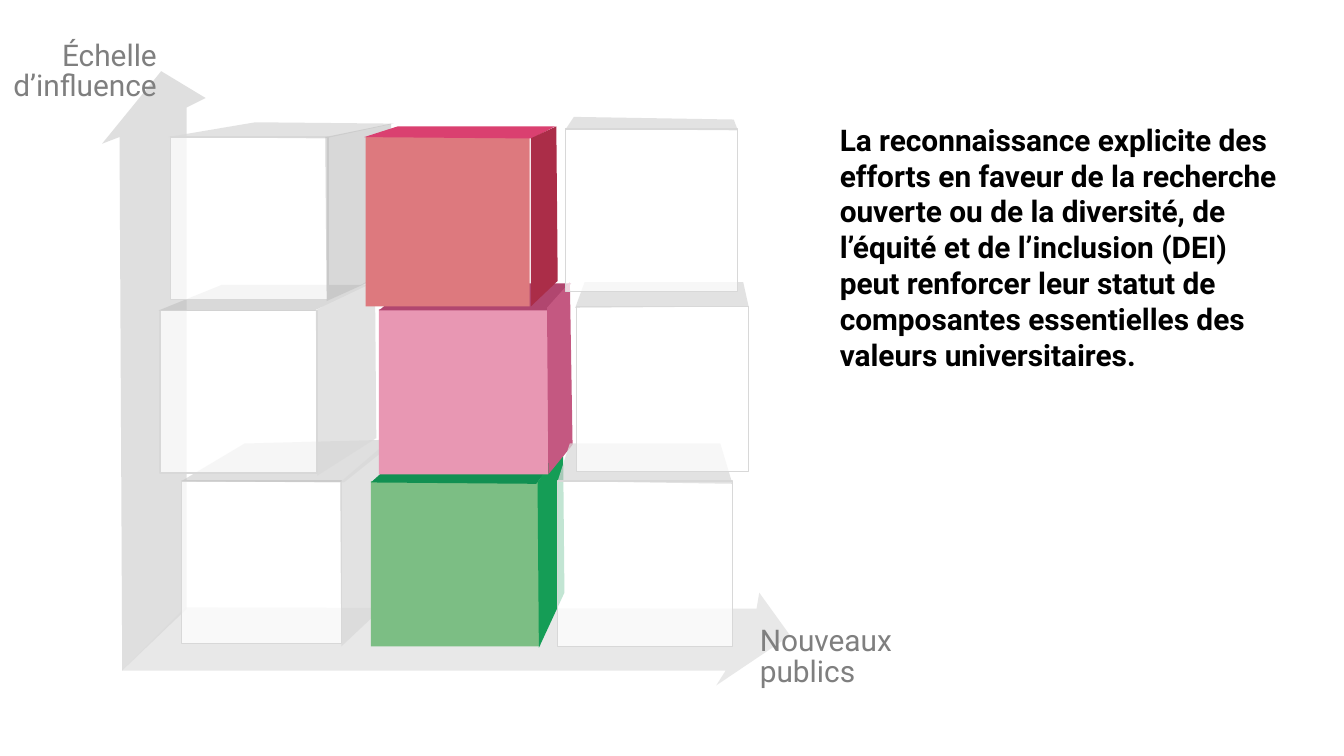
"""Build a slide with a three by three wall of cubes between two arrows."""
from lxml import etree
from pptx import Presentation
from pptx import util as u
from pptx.dml.color import RGBColor
from pptx.enum import shapes, text
from pptx.oxml.ns import qn

WIDTH = u.Inches(10)
HEIGHT = u.Emu(WIDTH * 9 // 16)
COLUMNS = 100
CELL = WIDTH / COLUMNS
FONT = "Roboto"
GREY, DARK_GREY, EDGE = "D9D9D9", "BFBFBF", "D8D8D8"
GLASS = ("FFFFFF", 74)

ARROWS = [
    ((GREY, 84), [(7.6, 10.7), (12, 5.3), (15.3, 7.3), (13.9, 8),
                  (13.9, 45.3), (9.1, 49.9), (8.9, 10.2)]),
    ((GREY, 60), [(53.3, 51), (58.8, 47.3), (56.5, 44.1), (56.3, 45.3),
                  (13.8, 45.2), (9.1, 49.9), (54, 49.9)]),
]

CUBES = [
    ((13.5, 35.8, 11.9, 12.1), GLASS, [
        ((DARK_GREY, 49), [(13.5, 35.8), (25.6, 35.9), (29.6, 32.7), (18.2, 33)]),
        ((GREY, 75), [(25.4, 48.1), (25.3, 35.9), (28.8, 32.9), (28.8, 44.9)])]),
    ((11.9, 23.1, 11.7, 12.1), GLASS, [
        ((DARK_GREY, 59), [(11.8, 23.1), (23.4, 23.1), (27.4, 21.2), (16.5, 21.2)]),
        ((GREY, 75), [(23.6, 35.4), (28, 32.6), (27.9, 20.6), (23.5, 23.1)])]),
    ((12.7, 10.2, 11.7, 12.1), GLASS, [
        ((GREY, 75), [(12.5, 10.2), (19, 9.1), (29.3, 9.2), (24.2, 10.3)]),
        ((DARK_GREY, 60), [(24.2, 10.2), (24.3, 22.4), (29.4, 20.1), (29.1, 9.2)])]),
    ((27.6, 35.8, 12.6, 12.3), ("7CBE84", 100), [
        (("119052", 100), [(27.6, 35.9), (39.9, 36), (42.1, 33.2), (30.6, 33.2)]),
        (("159D56", 100), [(40.1, 48.2), (40, 35.9), (41.9, 33), (42, 44.1)])]),
    ((28.2, 23, 12.6, 12.3), ("E897B3", 100), [
        (("B1466F", 100), [(28.2, 23.1), (40.7, 23.1), (42.5, 21.1), (30.7, 21.1)]),
        (("C45881", 100), [(40.7, 22.9), (42.4, 21), (42.6, 33.1), (40.8, 35.3)])]),
    ((27.2, 10.2, 12.2, 12.6), ("DD797E", 100), [
        (("DA4070", 100), [(27.1, 10.2), (39.6, 10.3), (41.3, 9.4), (29.6, 9.4)]),
        (("AB2D48", 100), [(39.5, 22.8), (41.5, 20.9), (41.4, 9.4), (39.5, 10.3)])]),
    ((41.5, 35.8, 13, 12.3), GLASS, [
        ((GREY, 75), [(41.5, 35.8), (42.4, 33), (53.6, 33), (54.5, 36)])]),
    ((42.9, 22.8, 12.8, 12.3), GLASS, [
        ((GREY, 75), [(42.8, 22.9), (55.7, 22.8), (55.3, 21), (43.5, 21)])]),
    ((42.1, 9.6, 12.8, 12.1), GLASS, [
        ((GREY, 75), [(42.1, 9.6), (42.7, 8.7), (54.6, 8.9), (54.9, 9.7)])]),
]

MESSAGE = (
    "La reconnaissance explicite des efforts en faveur de la recherche ouverte "
    "ou de la diversité, de l’équité et de l’inclusion (DEI) peut renforcer "
    "leur statut de composantes essentielles des valeurs universitaires."
)


def cells(*values):
    """Turn grid columns or rows into EMU."""
    return [u.Emu(round(v * CELL)) for v in values]


def color(hex_code):
    """Turn a hex string into a colour."""
    return RGBColor.from_string(hex_code)


def paint(sp, tint):
    """Fill a shape with a colour and an opacity in percent, without outline."""
    hex_code, opacity = tint
    sp.shadow.inherit = False
    sp.fill.solid()
    sp.fill.fore_color.rgb = color(hex_code)
    sp.line.fill.background()
    if opacity < 100:
        rgb = sp._element.spPr.find(qn("a:solidFill"))[0]
        etree.SubElement(rgb, qn("a:alpha"), val=str(opacity * 1000))


def add_polygon(s, tint, points):
    """Add a closed outline through the grid points."""
    start, *rest = [cells(*point) for point in points]
    builder = s.shapes.build_freeform(*start)
    builder.add_line_segments(rest, close=True)
    sp = builder.convert_to_shape()
    paint(sp, tint)
    return sp


def add_cube(s, box, tint, sides):
    """Add a grouped cube made of a front face and its visible sides."""
    front = s.shapes.add_shape(shapes.MSO_SHAPE.RECTANGLE, *cells(*box))
    paint(front, tint)
    if tint == GLASS:
        front.line.color.rgb = color(EDGE)
        front.line.width = u.Pt(0.75)
    s.shapes.add_group_shape([front] + [add_polygon(s, *side) for side in sides])


def add_text(s, box, words, hex_code, after, spacing=None, bold=False,
             align=text.PP_ALIGN.LEFT):
    """Add a wrapped one-paragraph text box."""
    tf = s.shapes.add_textbox(*cells(*box)).text_frame
    tf.word_wrap = True
    p = tf.paragraphs[0]
    p.text = words
    p.alignment = align
    p.line_spacing = spacing
    p.space_after = u.Pt(after)
    p.font.name = FONT
    p.font.size = u.Pt(16)
    p.font.bold = bold
    p.font.color.rgb = color(hex_code)


def main():
    """Build and save the slide."""
    prs = Presentation()
    prs.slide_width, prs.slide_height = WIDTH, HEIGHT
    s = prs.slides.add_slide(prs.slide_layouts[6])
    s.shapes.add_group_shape([add_polygon(s, *arrow) for arrow in ARROWS])
    for cube in CUBES:
        add_cube(s, *cube)
    add_text(s, (61.5, 8.55, 34.8, 38.4), MESSAGE, "000000", 9, bold=True)
    add_text(s, (55.55, 46.2, 13.5, 5.6), "Nouveaux publics", "7F7F7F", 6, 0.85)
    add_text(s, (-0.85, 2.65, 13.5, 5.6), "Échelle d’influence", "7F7F7F", 6, 0.85,
             align=text.PP_ALIGN.RIGHT)
    prs.save("out.pptx")


if __name__ == "__main__":
    main()
